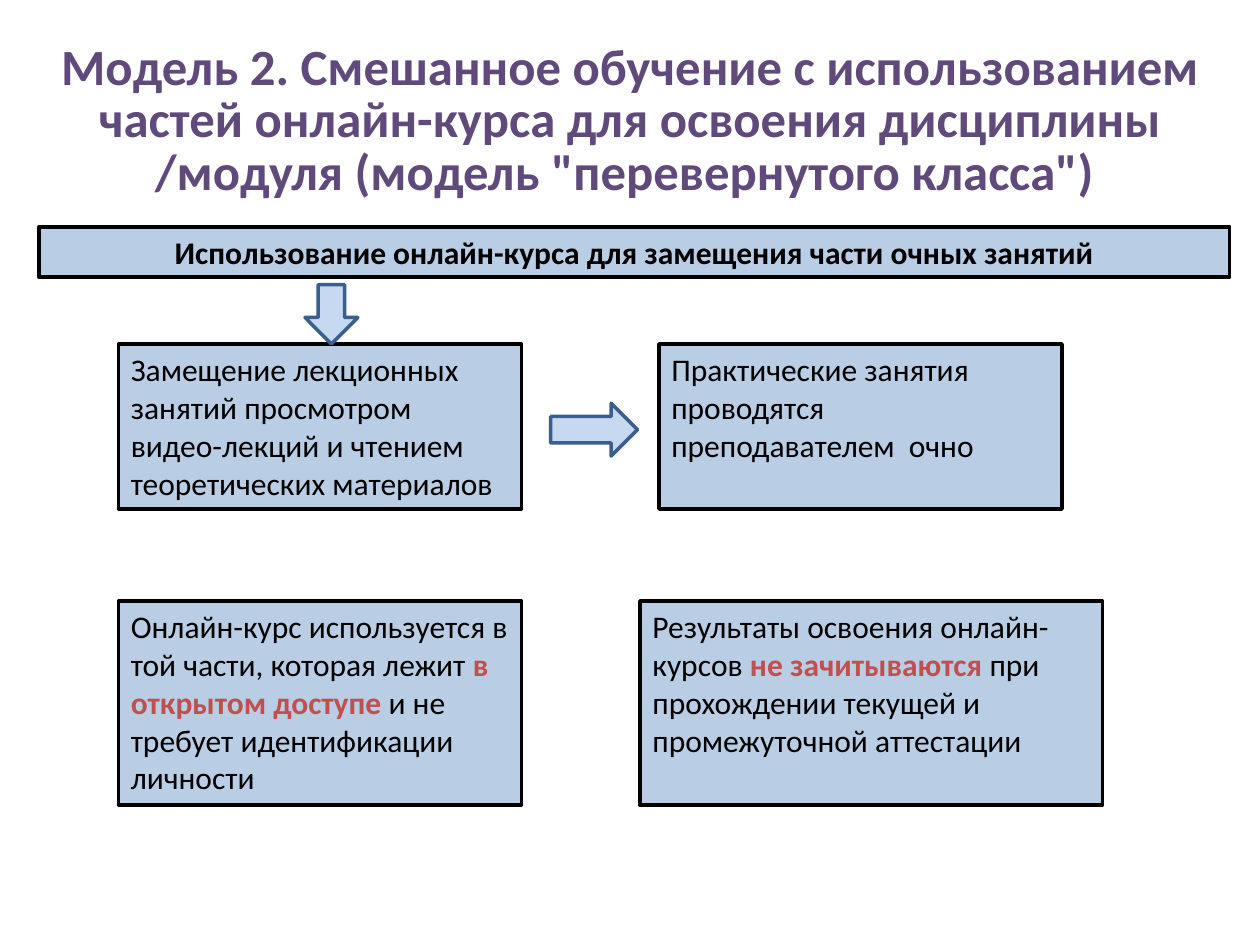
from dataclasses import dataclass

import pptx
import pptx.dml.color
import pptx.enum.shapes
import pptx.enum.text
import pptx.util

Shape = pptx.enum.shapes.MSO_SHAPE
Align = pptx.enum.text.PP_ALIGN
Anchor = pptx.enum.text.MSO_ANCHOR
AutoSize = pptx.enum.text.MSO_AUTO_SIZE

WIDTH, HEIGHT = pptx.util.Inches(10), pptx.util.Inches(7.5)
COLUMNS, ROWS = 100, 75


@dataclass(frozen=True)
class Theme:
    font: str = "Calibri"
    title_size: float = 29
    title_spacing: float = 30
    body_size: float = 18
    outline: float = 2
    title: str = "604A7B"
    text: str = "000000"
    accent: str = "C0504D"
    panel: str = "B9CDE5"
    panel_line: str = "000000"
    arrow: str = "C6D9F1"
    arrow_line: str = "3A5F8C"


THEME = Theme()


@dataclass(frozen=True)
class Area:
    """A rectangle in grid columns and rows."""
    column: float
    row: float
    columns: float
    rows: float


@dataclass(frozen=True)
class Span:
    text: str
    bold: bool = False
    color: str = THEME.text


@dataclass(frozen=True)
class Panel:
    area: Area
    spans: tuple[Span, ...]
    align: Align = Align.LEFT


@dataclass(frozen=True)
class Arrow:
    area: Area
    kind: Shape


def emphasis(text: str) -> Span:
    return Span(text, bold=True, color=THEME.accent)


LEFT, UPPER, LOWER = 9.4, 27.3, 47.7
CARD_WIDTH, UPPER_HEIGHT, LOWER_HEIGHT = 32, 13.1, 16.2

TITLE = ("Модель 2. Смешанное обучение с использованием частей онлайн-курса "
         "для освоения дисциплины /модуля (модель \"перевернутого класса\") ")
TITLE_AREA = Area(1.6, 5.5, 96.9, 12.5)

PANELS = (
    Panel(Area(3.1, 18, 94.5, 4), (
        Span("Использование онлайн-курса для замещения части очных занятий", bold=True),
    ), Align.CENTER),
    Panel(Area(LEFT, UPPER, CARD_WIDTH, UPPER_HEIGHT), (
        Span("Замещение лекционных занятий просмотром видео-лекций "
             "и чтением теоретических материалов"),
    )),
    Panel(Area(52.3, UPPER, CARD_WIDTH, UPPER_HEIGHT), (
        Span("Практические занятия проводятся преподавателем  очно"),
    )),
    Panel(Area(LEFT, LOWER, CARD_WIDTH, LOWER_HEIGHT), (
        Span("Онлайн-курс используется в той части, которая лежит "),
        emphasis("в открытом доступе"),
        Span(" и не требует идентификации личности"),
    )),
    Panel(Area(50.8, LOWER, 36.7, LOWER_HEIGHT), (
        Span("Результаты освоения онлайн-курсов "),
        emphasis("не зачитываются "),
        Span("при прохождении текущей и промежуточной аттестации"),
    )),
)

ARROWS = (
    Arrow(Area(24.2, 22.6, 4.2, 4.7), Shape.DOWN_ARROW),
    Arrow(Area(43.7, 32, 6.9, 4.2), Shape.RIGHT_ARROW),
)


def rgb(color: str) -> pptx.dml.color.RGBColor:
    return pptx.dml.color.RGBColor.from_string(color)


def bounds(area: Area) -> tuple[int, int, int, int]:
    """Left, top, width and height in slide units."""
    return (round(WIDTH * area.column / COLUMNS), round(HEIGHT * area.row / ROWS),
            round(WIDTH * area.columns / COLUMNS), round(HEIGHT * area.rows / ROWS))


def add_text(para, text: str, *, size: float, color: str, bold: bool = False) -> None:
    run = para.add_run()
    run.text = text
    run.font.name = THEME.font
    run.font.size = pptx.util.Pt(size)
    run.font.bold = bold
    run.font.color.rgb = rgb(color)


def add_outlined(page, kind: Shape, area: Area, *, fill: str, line: str):
    shape = page.shapes.add_shape(kind, *bounds(area))
    shape.shadow.inherit = False
    shape.fill.solid()
    shape.fill.fore_color.rgb = rgb(fill)
    shape.line.color.rgb = rgb(line)
    shape.line.width = pptx.util.Pt(THEME.outline)
    return shape


def set_title(page) -> None:
    box = page.shapes.title
    box.left, box.top, box.width, box.height = bounds(TITLE_AREA)
    frame = box.text_frame
    frame.word_wrap = True
    frame.auto_size = AutoSize.NONE
    frame.vertical_anchor = Anchor.MIDDLE
    # One line of extra room below lifts the heading clear of the banner.
    frame.margin_bottom = pptx.util.Pt(THEME.title_spacing + 3.6)
    para = frame.paragraphs[0]
    para.alignment = Align.CENTER
    para.line_spacing = pptx.util.Pt(THEME.title_spacing)
    add_text(para, TITLE, size=THEME.title_size, color=THEME.title, bold=True)


def add_panel(page, panel: Panel) -> None:
    box = add_outlined(page, Shape.RECTANGLE, panel.area,
                       fill=THEME.panel, line=THEME.panel_line)
    frame = box.text_frame
    frame.word_wrap = True
    frame.auto_size = AutoSize.SHAPE_TO_FIT_TEXT
    frame.vertical_anchor = Anchor.TOP
    para = frame.paragraphs[0]
    para.alignment = panel.align
    for span in panel.spans:
        add_text(para, span.text, size=THEME.body_size, color=span.color, bold=span.bold)


def main() -> None:
    deck = pptx.Presentation()
    deck.slide_width, deck.slide_height = WIDTH, HEIGHT
    page = deck.slides.add_slide(deck.slide_layouts.get_by_name("Title Only"))
    set_title(page)
    for panel in PANELS:
        add_panel(page, panel)
    for arrow in ARROWS:
        add_outlined(page, arrow.kind, arrow.area, fill=THEME.arrow, line=THEME.arrow_line)
    deck.save("out.pptx")


if __name__ == "__main__":
    main()
